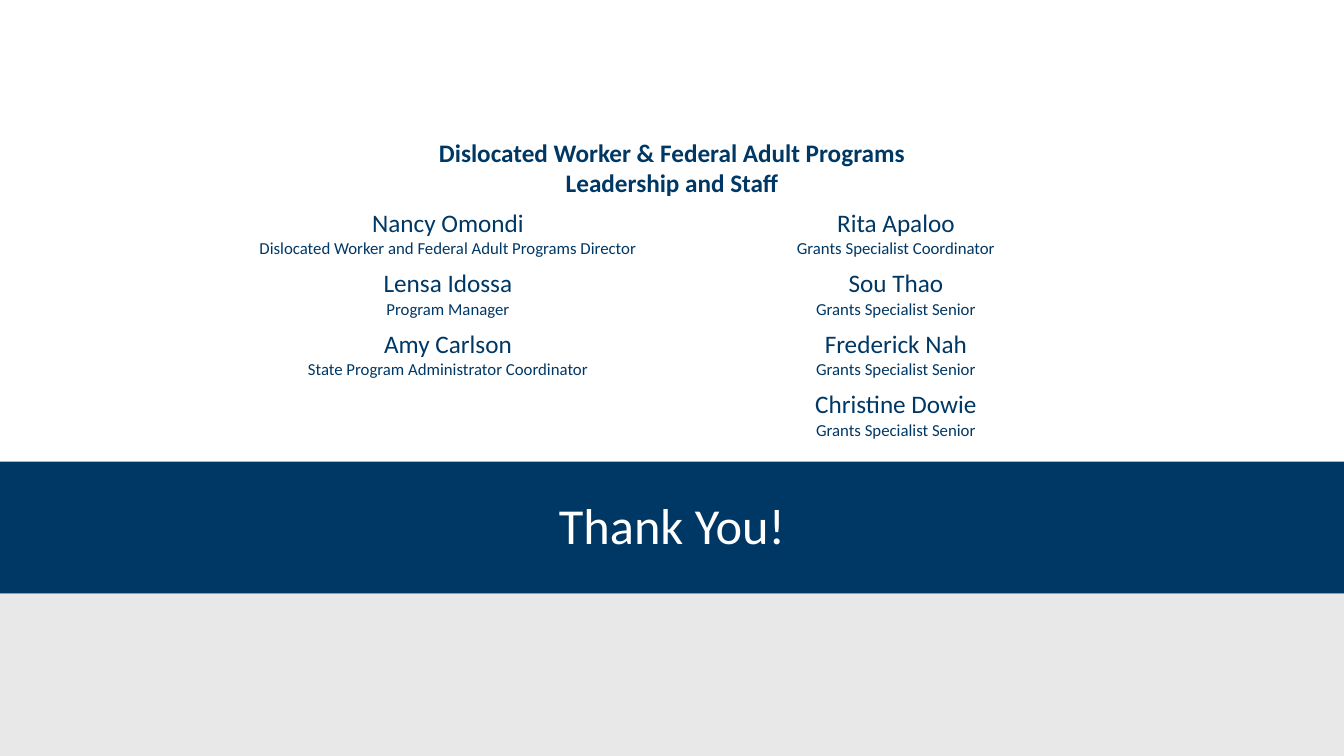
from lxml.etree import SubElement
from pptx import Presentation
from pptx.dml.color import RGBColor
from pptx.enum.shapes import MSO_SHAPE
from pptx.enum.text import MSO_ANCHOR, MSO_AUTO_SIZE, PP_ALIGN
from pptx.oxml.ns import qn
from pptx.util import Pt

NAVY, GRAY, WHITE = "003865", "E8E8E8", "FFFFFF"
WIDTH, HEIGHT = 960, 540
BAND_TOP, BAND_HEIGHT = 329.8, 94.3
BAND_BOTTOM = BAND_TOP + BAND_HEIGHT
TEXT_LEFT, TEXT_WIDTH = 21, 918

HEADING = ["Dislocated Worker & Federal Adult Programs", "Leadership and Staff"]
STAFF = [
    [("Nancy Omondi", "Dislocated Worker and Federal Adult Programs Director"),
     ("Rita Apaloo", "Grants Specialist Coordinator")],
    [("Lensa Idossa", "Program Manager"), ("Sou Thao", "Grants Specialist Senior")],
    [("Amy Carlson", "State Program Administrator Coordinator"),
     ("Frederick Nah", "Grants Specialist Senior")],
    [None, ("Christine Dowie", "Grants Specialist Senior")],
]


def color(value):
    """Turn a hex string into a colour."""
    return RGBColor.from_string(value)


def write(paragraph, text, size=18, ink=NAVY, bold=False, spacing=1.0):
    """Write one centred, formatted run into a paragraph."""
    paragraph.alignment = PP_ALIGN.CENTER
    paragraph.line_spacing = spacing
    run = paragraph.add_run()
    run.text = text
    run.font.name = "Calibri"
    run.font.size = Pt(size)
    run.font.bold = bold
    run.font.color.rgb = color(ink)


def write_lines(frame, lines, sizes, **style):
    """Write one paragraph per line, each in its own size."""
    for index, (line, size) in enumerate(zip(lines, sizes)):
        paragraph = frame.add_paragraph() if index else frame.paragraphs[0]
        write(paragraph, line, size=size, **style)


def draw_borders(cell, bottom):
    """Give a cell white borders with a chosen bottom width."""
    properties = cell._tc.get_or_add_tcPr()
    for index, (side, width) in enumerate(zip("LRTB", (1, 1, 1, bottom))):
        line = properties.makeelement(qn(f"a:ln{side}"), {"w": str(Pt(width))})
        properties.insert(index, line)
        fill = SubElement(line, qn("a:solidFill"))
        SubElement(fill, qn("a:srgbClr"), val=WHITE)


class ClosingSlide:
    """A title-only slide with bands, a heading and a staff table."""

    def __init__(self, presentation):
        """Add the slide to the presentation."""
        self.slide = presentation.slides.add_slide(presentation.slide_layouts[5])
        self.shapes = self.slide.shapes

    def band(self, top, height, fill):
        """Draw a band across the full width."""
        shape = self.shapes.add_shape(MSO_SHAPE.RECTANGLE, 0, Pt(top), Pt(WIDTH), Pt(height))
        shape.shadow.inherit = False
        shape.fill.solid()
        shape.fill.fore_color.rgb = color(fill)
        shape.line.fill.background()

    def title(self, text, left, top, width, height):
        """Place the title in front of the bands."""
        title = self.shapes.title
        title.left, title.top, title.width, title.height = map(Pt, (left, top, width, height))
        title.element.getparent().append(title.element)
        frame = title.text_frame
        frame.auto_size = MSO_AUTO_SIZE.NONE
        frame.vertical_anchor = MSO_ANCHOR.MIDDLE
        write(frame.paragraphs[0], text, size=36, ink=WHITE, spacing=0.9)

    def heading(self, lines, left, top, width, height):
        """Add a bold centred heading."""
        frame = self.shapes.add_textbox(*map(Pt, (left, top, width, height))).text_frame
        frame.word_wrap = True
        write_lines(frame, lines, [18] * len(lines), bold=True)

    def staff_table(self, rows, left, top, width, height):
        """Add a plain table with a name and a role in each cell."""
        table = self.shapes.add_table(
            len(rows), len(rows[0]), *map(Pt, (left, top, width, height))).table
        table.first_row = table.horz_banding = False
        for row_index, row in enumerate(rows):
            for column_index, person in enumerate(row):
                cell = table.cell(row_index, column_index)
                cell.fill.background()
                draw_borders(cell, bottom=1 if row_index else 3)
                if person:
                    write_lines(cell.text_frame, person, (18, 12))


def main():
    """Build and save the presentation."""
    presentation = Presentation()
    presentation.slide_width, presentation.slide_height = Pt(WIDTH), Pt(HEIGHT)
    closing = ClosingSlide(presentation)
    closing.band(BAND_TOP, BAND_HEIGHT, NAVY)
    closing.band(BAND_BOTTOM, HEIGHT - BAND_BOTTOM, GRAY)
    closing.title("Thank You!", TEXT_LEFT, BAND_TOP, TEXT_WIDTH, BAND_HEIGHT)
    closing.heading(HEADING, TEXT_LEFT, 94.3, TEXT_WIDTH, 51)
    closing.staff_table(STAFF, 160, 145, 640, 172.8)
    presentation.save("out.pptx")


if __name__ == "__main__":
    main()
